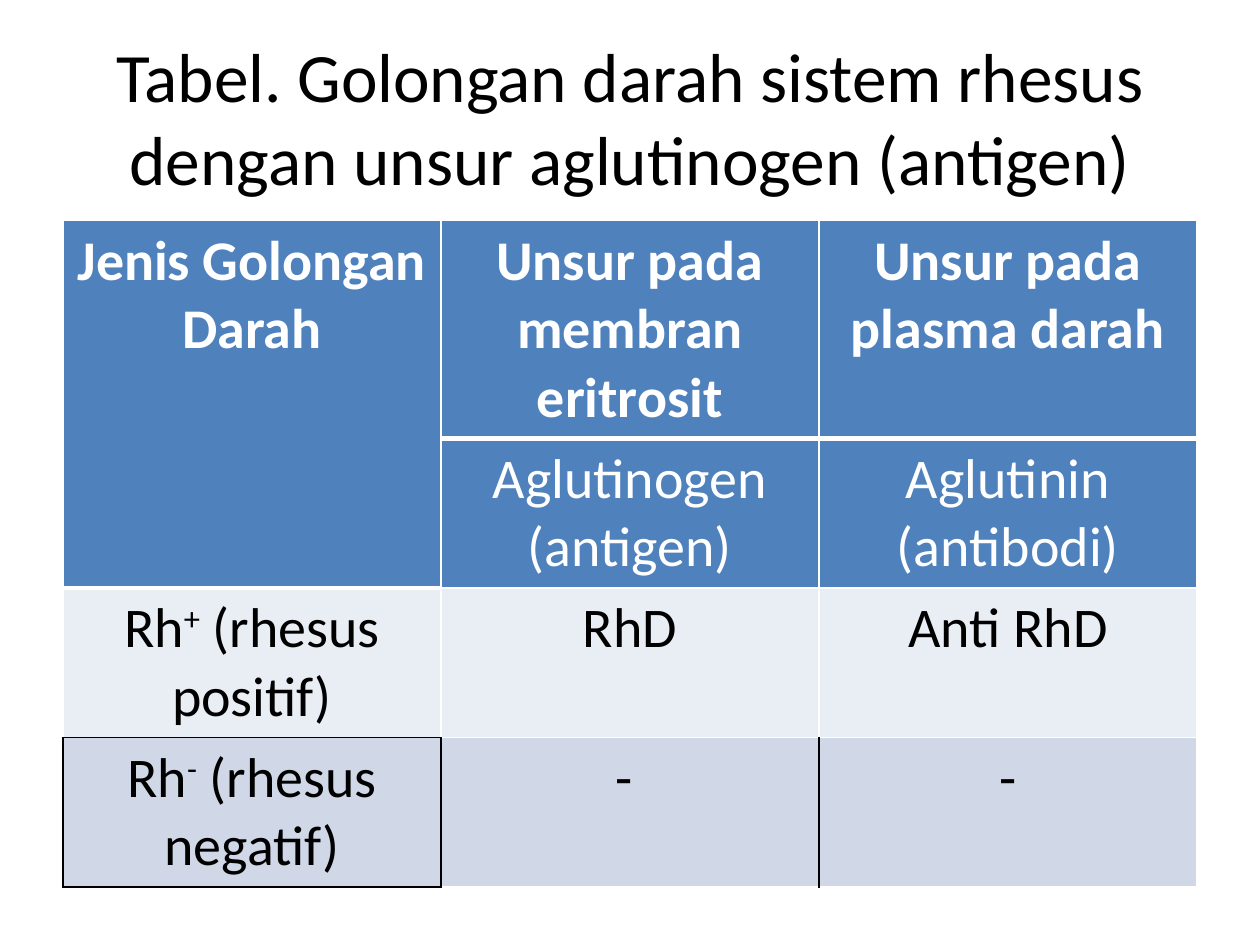
"""Build a slide with a table of rhesus blood groups."""
from lxml import etree
from pptx import Presentation
from pptx import util as u
from pptx.dml.color import RGBColor
from pptx.enum import text
from pptx.oxml.ns import qn

BLACK = RGBColor(0x00, 0x00, 0x00)
WHITE = RGBColor(0xFF, 0xFF, 0xFF)
BLUE = RGBColor(0x4F, 0x81, 0xBD)
PALE = RGBColor(0xE9, 0xED, 0xF4)
BAND = RGBColor(0xD0, 0xD8, 0xE8)

HEADING = "Tabel. Golongan darah sistem rhesus dengan unsur aglutinogen (antigen)"
BLOOD_GROUPS = [
    ["Jenis Golongan Darah", "Unsur pada membran eritrosit", "Unsur pada plasma darah"],
    ["", "Aglutinogen (antigen)", "Aglutinin\n(antibodi)"],
    [("Rh", "+", " (rhesus positif)"), "RhD", "Anti RhD"],
    [("Rh", "-", " (rhesus negatif)"), "- ", "-"],
]
ROW_STYLES = [
    dict(fill=BLUE, color=WHITE, bold=True),
    dict(fill=BLUE, color=WHITE, bold=False),
    dict(fill=PALE, color=BLACK, bold=False),
    dict(fill=BAND, color=BLACK, bold=False),
]
ROW_HEIGHTS = [1.72, 1.18, 1.18, 1.18]
COLUMN_WIDTH = 3
THICK, THIN_BLACK = (WHITE, 3), (BLACK, 1)
SPECIAL_EDGES = {
    (0, 0): {"B": THICK}, (0, 1): {"B": THICK}, (0, 2): {"B": THICK},
    (1, 0): {"B": THICK}, (1, 1): {"T": THICK}, (1, 2): {"T": THICK},
    (2, 0): {"T": THICK, "B": THIN_BLACK},
    (3, 0): dict.fromkeys("LRTB", THIN_BLACK),
    (3, 1): {"L": THIN_BLACK, "R": THIN_BLACK},
    (3, 2): {"L": THIN_BLACK},
}


def write(frame, content, size=32, color=BLACK, bold=False):
    lines = [content] if isinstance(content, tuple) else [(line,) for line in content.split("\n")]
    for index, pieces in enumerate(lines):
        paragraph = frame.add_paragraph() if index else frame.paragraphs[0]
        paragraph.alignment = text.PP_ALIGN.CENTER
        for position, piece in enumerate(pieces):
            run = paragraph.add_run()
            run.text = piece
            run.font.name = "Calibri"
            run.font.size = u.Pt(size)
            run.font.bold = bold
            run.font.color.rgb = color
            if position == 1:
                run.font._element.set("baseline", "30000")


def draw_edges(cell, special):
    properties = cell._tc.get_or_add_tcPr()
    for side in "LRTB":
        color, width = special.get(side, (WHITE, 1))
        edge = etree.SubElement(properties, qn(f"a:ln{side}"), w=str(u.Pt(width)))
        fill = etree.SubElement(edge, qn("a:solidFill"))
        etree.SubElement(fill, qn("a:srgbClr"), val=str(color))


def main():
    deck = Presentation()
    deck.slide_width, deck.slide_height = u.Inches(10), u.Inches(7.5)
    slide = deck.slides.add_slide(deck.slide_layouts[6 - 1])

    heading = slide.shapes.title
    heading.left, heading.top = u.Inches(0.5), u.Inches(0.3)
    heading.width, heading.height = u.Inches(9), u.Inches(1.25)
    heading.text_frame.auto_size = text.MSO_AUTO_SIZE.NONE
    heading.text_frame.vertical_anchor = text.MSO_ANCHOR.MIDDLE
    write(heading.text_frame, HEADING, size=39.6)

    columns = len(BLOOD_GROUPS[0])
    table = slide.shapes.add_table(
        len(BLOOD_GROUPS), columns, u.Inches(0.5), u.Inches(1.75),
        u.Inches(COLUMN_WIDTH * columns), u.Inches(sum(ROW_HEIGHTS))).table
    table.first_row = table.horz_banding = False
    table.cell(0, 0).merge(table.cell(1, 0))

    for r, (row, style) in enumerate(zip(BLOOD_GROUPS, ROW_STYLES)):
        table.rows[r].height = u.Inches(ROW_HEIGHTS[r])
        for c, content in enumerate(row):
            cell = table.cell(r, c)
            draw_edges(cell, SPECIAL_EDGES.get((r, c), {}))
            cell.fill.solid()
            cell.fill.fore_color.rgb = style["fill"]
            if content:
                write(cell.text_frame, content, color=style["color"], bold=style["bold"])

    deck.save("out.pptx")


if __name__ == "__main__":
    main()
